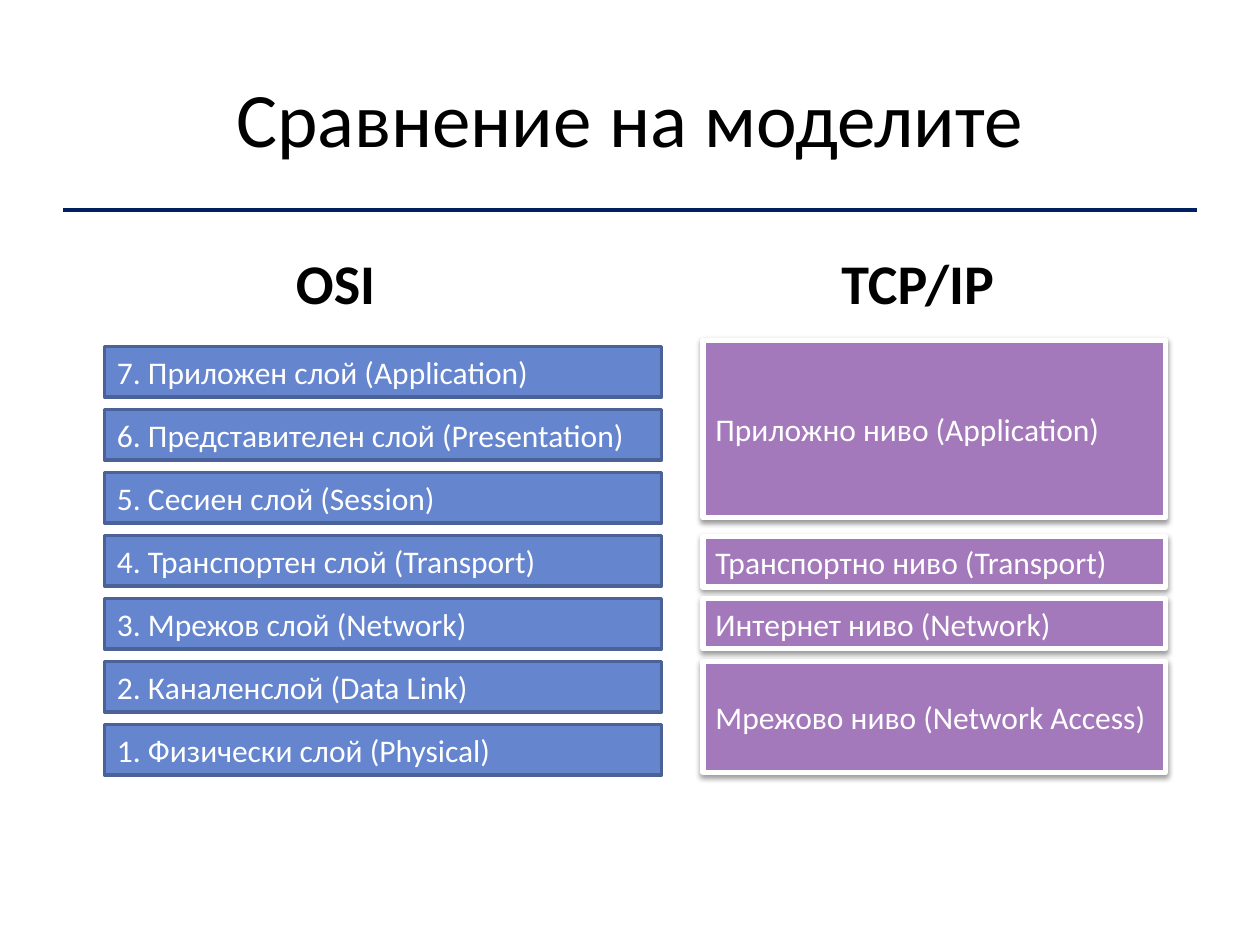
from lxml.etree import SubElement
from pptx import Presentation
from pptx.dml.color import RGBColor
from pptx.enum.shapes import MSO_CONNECTOR, MSO_SHAPE
from pptx.enum.text import MSO_ANCHOR as ANCHOR, PP_ALIGN as ALIGN
from pptx.oxml.ns import qn
from pptx.util import Inches, Pt

TITLE = "Сравнение на моделите"
OSI_LAYERS = [
    "7. Приложен слой (Application)",
    "6. Представителен слой (Presentation)",
    "5. Сесиен слой (Session)",
    "4. Транспортен слой (Transport)",
    "3. Мрежов слой (Network)",
    "2. Каналенслой (Data Link)",
    "1. Физически слой (Physical)",
]
TCP_LAYERS = [
    ("Приложно ниво (Application)", 2.7, 1.41),
    ("Транспортно ниво (Transport)", 4.26, 0.4),
    ("Интернет ниво (Network)", 4.75, 0.4),
    ("Мрежово ниво (Network Access)", 5.25, 0.88),
]
HEADINGS = [("OSI", 2.25, 0.92), ("TCP/IP", 6.58, 1.67)]

OSI_STYLE = {"fill": "6585CF", "line": "4B6299", "width": 2, "shadow": False}
TCP_STYLE = {"fill": "A379BB", "line": "FFFFFF", "width": 3, "shadow": True}
TITLE_FONT = {"name": "Calibri", "size": Pt(44)}
HEADING_FONT = {"name": "Calibri", "size": Pt(32), "bold": True}
LAYER_FONT = {"name": "Calibri", "size": Pt(18)}
OSI_TOP, OSI_STEP, OSI_HEIGHT = 2.75, 0.5, 0.4


def rgb(value):
    return RGBColor.from_string(value)


def box(left, top, width, height):
    return [Inches(v) for v in (left, top, width, height)]


def write(sp, text, font, color, align=ALIGN.LEFT, anchor=ANCHOR.MIDDLE):
    tf = sp.text_frame
    tf.word_wrap = True
    tf.vertical_anchor = anchor
    p = tf.paragraphs[0]
    p.alignment = align
    r = p.add_run()
    r.text = text
    for name, value in font.items():
        setattr(r.font, name, value)
    r.font.color.rgb = rgb(color)


def add_shadow(sp):
    effects = sp._element.spPr.find(qn("a:effectLst"))
    shadow = SubElement(effects, qn("a:outerShdw"), blurRad=str(Pt(3.1)),
                        dist=str(Pt(1.6)), dir="5400000", rotWithShape="0")
    color = SubElement(shadow, qn("a:srgbClr"), val="000000")
    SubElement(color, qn("a:alpha"), val="38000")


def add_layer(slide, text, place, style):
    sp = slide.shapes.add_shape(MSO_SHAPE.RECTANGLE, *box(*place))
    sp.fill.solid()
    sp.fill.fore_color.rgb = rgb(style["fill"])
    sp.line.color.rgb = rgb(style["line"])
    sp.line.width = Pt(style["width"])
    sp.shadow.inherit = False
    if style["shadow"]:
        add_shadow(sp)
    write(sp, text, LAYER_FONT, "FFFFFF")


def add_rule(slide):
    line = slide.shapes.add_connector(
        MSO_CONNECTOR.STRAIGHT, *box(0.5, 1.67, 9.5, 1.67))
    line.line.color.rgb = rgb("002060")
    line.line.width = Pt(2.25)
    SubElement(line._element.spPr, qn("a:effectLst"))


def main():
    prs = Presentation()
    prs.slide_width, prs.slide_height = Inches(10), Inches(7.5)
    slide = prs.slides.add_slide(prs.slide_layouts[5])
    add_rule(slide)

    title = slide.shapes.title
    title.left, title.top, title.width, title.height = box(0.5, 0.3, 9, 1.25)
    write(title, TITLE, TITLE_FONT, "000000", ALIGN.CENTER)

    for i, text in enumerate(OSI_LAYERS):
        place = (0.83, OSI_TOP + i * OSI_STEP, 4.42, OSI_HEIGHT)
        add_layer(slide, text, place, OSI_STYLE)
    for text, top, height in TCP_LAYERS:
        add_layer(slide, text, (5.58, top, 3.67, height), TCP_STYLE)

    for text, left, width in HEADINGS:
        sp = slide.shapes.add_textbox(*box(left, 1.92, width, 0.64))
        write(sp, text, HEADING_FONT, "000000", anchor=ANCHOR.TOP)

    prs.save("out.pptx")


if __name__ == "__main__":
    main()
